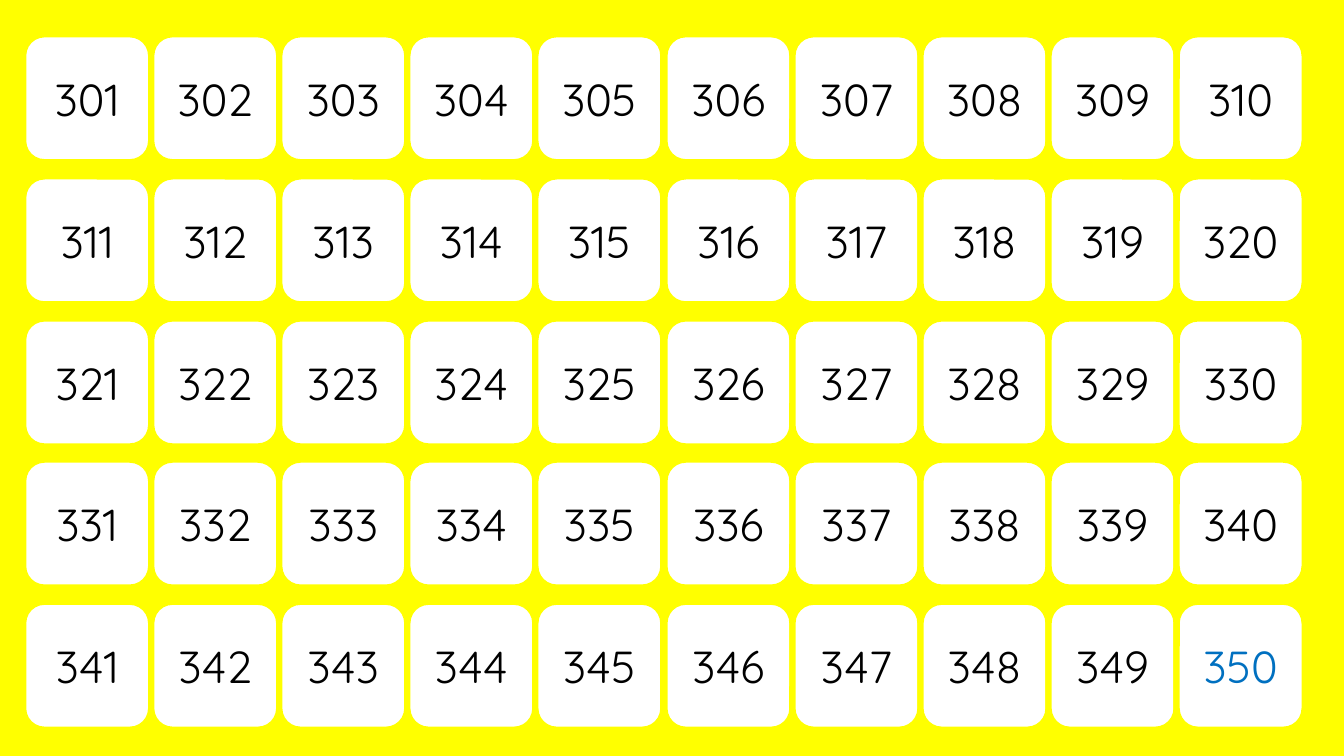
from dataclasses import dataclass
from typing import Iterator

from pptx import Presentation
from pptx import util as u
from pptx.dml.color import RGBColor
from pptx.enum import shapes, text
from pptx.slide import Slide

EMU_PER_PX = 9144
SLIDE_WIDTH, SLIDE_HEIGHT = 1333, 750
COLUMNS, ROWS = 10, 5
FIRST_NUMBER, LAST_NUMBER = 301, 350
GRID_LEFT, GRID_TOP = 23, 34
LAST_LEFT, LAST_TOP = 1167, 597
TILE_SIZE = 127
YELLOW, WHITE, BLACK, BLUE = "FFFF00", "FFFFFF", "000000", "0070C0"


@dataclass(frozen=True)
class NumberTile:
    number: int
    left: int
    top: int
    color: str


def px(length: int) -> u.Emu:
    return u.Emu(length * EMU_PER_PX)


def rgb(color: str) -> RGBColor:
    return RGBColor.from_string(color)


def spread(first: int, last: int, count: int) -> list[int]:
    return [round(first + (last - first) * i / (count - 1)) for i in range(count)]


def number_tiles() -> Iterator[NumberTile]:
    number = FIRST_NUMBER
    for top in spread(GRID_TOP, LAST_TOP, ROWS):
        for left in spread(GRID_LEFT, LAST_LEFT, COLUMNS):
            yield NumberTile(number, left, top, BLUE if number == LAST_NUMBER else BLACK)
            number += 1


def draw_tile(slide: Slide, tile: NumberTile) -> None:
    card = slide.shapes.add_shape(
        shapes.MSO_SHAPE.ROUNDED_RECTANGLE,
        px(tile.left), px(tile.top), px(TILE_SIZE), px(TILE_SIZE),
    )
    card.shadow.inherit = False
    card.fill.solid()
    card.fill.fore_color.rgb = rgb(WHITE)
    card.line.color.rgb = rgb(YELLOW)
    card.line.width = u.Pt(4.5)
    card.text_frame.vertical_anchor = text.MSO_ANCHOR.MIDDLE
    label = card.text_frame.paragraphs[0]
    label.text = str(tile.number)
    label.alignment = text.PP_ALIGN.CENTER
    label.font.name = "Quicksand"
    label.font.size = u.Pt(32)
    label.font.color.rgb = rgb(tile.color)


def main() -> None:
    deck = Presentation()
    deck.slide_width, deck.slide_height = px(SLIDE_WIDTH), px(SLIDE_HEIGHT)
    number_chart = deck.slides.add_slide(deck.slide_layouts.get_by_name("Blank"))
    number_chart.background.fill.solid()
    number_chart.background.fill.fore_color.rgb = rgb(YELLOW)
    for tile in number_tiles():
        draw_tile(number_chart, tile)
    deck.save("out.pptx")


if __name__ == "__main__":
    main()
